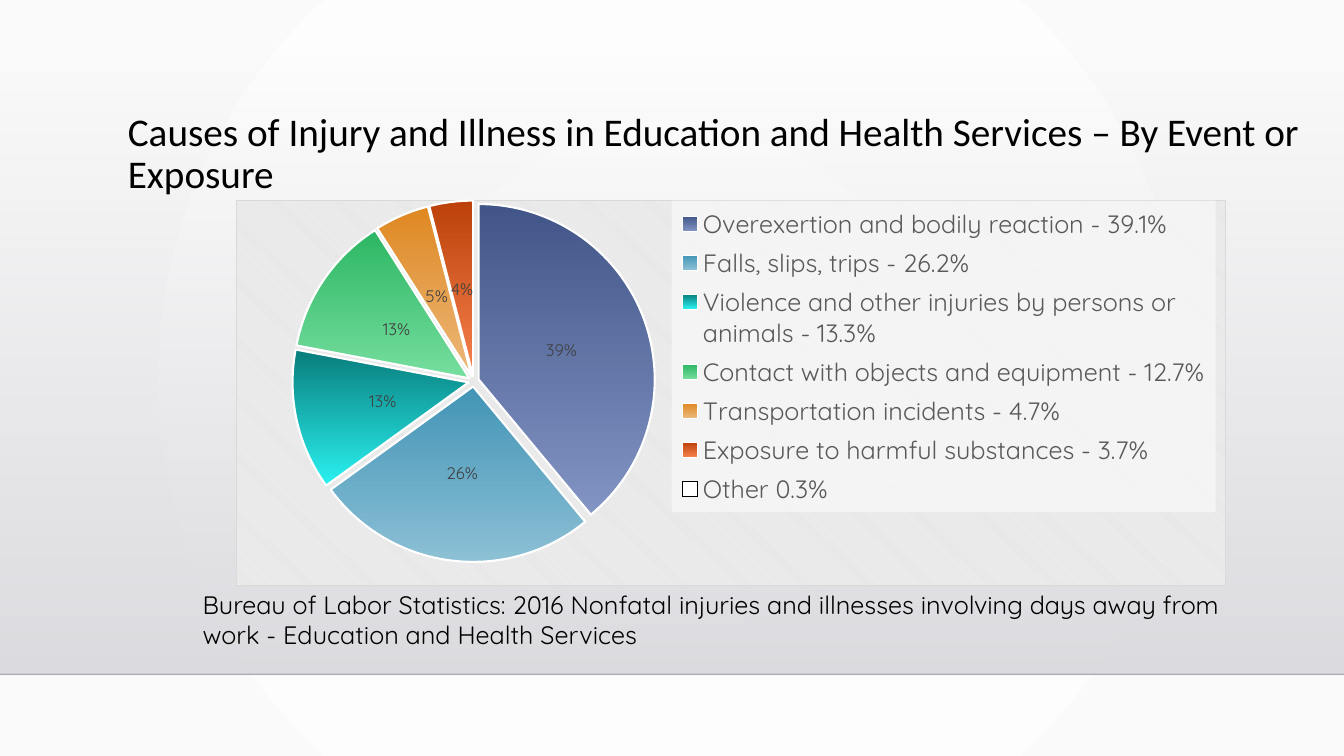
from dataclasses import dataclass

from pptx import Presentation
from pptx.chart.data import CategoryChartData
from pptx.dml.color import RGBColor
from pptx.enum.chart import XL_CHART_TYPE, XL_LABEL_POSITION, XL_LEGEND_POSITION
from pptx.enum.shapes import MSO_CONNECTOR, MSO_SHAPE
from pptx.enum.text import MSO_ANCHOR
from pptx.oxml import parse_xml
from pptx.oxml.ns import nsdecls, qn
from pptx.util import Inches, Pt


@dataclass(frozen=True)
class Theme:
    head: str = "Calibri"
    body: str = "Quicksand"
    ink: str = "000000"
    soft: str = "595959"
    label: str = "404040"
    white: str = "FFFFFF"
    page: tuple = ("FFFFFF", "FAFAFA")
    band: tuple = ("DCDCE0", "DEDEE2")
    rule: str = "000001"
    weave: str = "E6E6E6"
    edge: str = "D9D9D9"
    key: str = "F2F2F2"
    big: int = 28
    mid: int = 18
    small: int = 12
    tiny: int = 10


CAUSES = [
    ("Overexertion and bodily reaction - 39.1%", 39, ("415588", "8294C3")),
    ("Falls, slips, trips - 26.2%", 26, ("4294B6", "8CC0D5")),
    ("Violence and other injuries by persons or animals - 13.3%", 13, ("087D7C", "2AF1F0")),
    ("Contact with objects and equipment - 12.7%", 13, ("2CB663", "76DE9F")),
    ("Transportation incidents - 4.7%", 5, ("DF8822", "ECB87A")),
    ("Exposure to harmful substances - 3.7%", 4, ("BC410A", "F6814D")),
    ("Other 0.3%", None, None),
]


def node(text):
    """Parse XML whose first tag still lacks its namespaces."""
    tag, rest = text.split(">", 1)
    mark = "/" if tag.endswith("/") else ""
    return parse_xml(f"{tag.rstrip('/')} {nsdecls('a', 'c')}{mark}>{rest}")


def fade(root, share):
    """Set the opacity, in percent, of the first colour below root."""
    tint = next(root.iter(qn("a:srgbClr")))
    tint.append(node(f'<a:alpha val="{share * 1000}"/>'))


def blend(fill, pair):
    """Fill from top to bottom with a pair of colours."""
    fill.gradient()
    fill.gradient_angle = 270
    for stop, tint in zip(fill.gradient_stops, pair):
        stop.color.rgb = RGBColor.from_string(tint)


def style(font, face, size, tint):
    font.name, font.size = face, Pt(size)
    font.color.rgb = RGBColor.from_string(tint)


def place(part, index, box):
    """Give a chart part a fixed box, in shares of the chart."""
    for old in part.findall(qn("c:layout")):
        part.remove(old)
    inner = '<c:layoutTarget val="inner"/>' if part.tag == qn("c:plotArea") else ""
    modes = '<c:xMode val="edge"/><c:yMode val="edge"/>'
    sizes = "".join(f'<c:{key} val="{val}"/>' for key, val in zip("xywh", box))
    part.insert(index, node(
        f"<c:layout><c:manualLayout>{inner}{modes}{sizes}</c:manualLayout></c:layout>"))


def skin(part, look):
    """Put fill and line ahead of the text style of a chart part."""
    part.find(qn("c:txPr")).addprevious(node(f"<c:spPr>{look}</c:spPr>"))


class Page:
    """One slide; every box is left, top, width, height in percent of it."""

    def __init__(self, theme):
        self.theme = theme
        self.deck = Presentation()
        self.deck.slide_width, self.deck.slide_height = Inches(13.33), Inches(7.5)
        self.slide = self.deck.slides.add_slide(self.deck.slide_layouts[6])

    def scale(self, *box):
        sides = (self.deck.slide_width, self.deck.slide_height) * 2
        return [round(side * share / 100) for side, share in zip(sides, box)]

    def ground(self):
        blend(self.slide.background.fill, self.theme.page)
        line = next(self.slide._element.iter(qn("a:lin")))
        line.addprevious(node(
            '<a:path path="circle"><a:fillToRect l="50000" t="50000" r="50000" b="50000"/></a:path>'))
        line.getparent().remove(line)

    def band(self, *box):
        shape = self.slide.shapes.add_shape(MSO_SHAPE.RECTANGLE, *self.scale(*box))
        shape.shadow.inherit = False
        shape.line.fill.background()
        blend(shape.fill, self.theme.band)
        fade(shape._element, 0)

    def rule(self, *ends):
        line = self.slide.shapes.add_connector(MSO_CONNECTOR.STRAIGHT, *self.scale(*ends))
        line.line.width = Pt(1)
        line.line.color.rgb = RGBColor.from_string(self.theme.rule)
        fade(line._element, 20)
        line._element.spPr.append(node("<a:effectLst/>"))

    def text(self, words, box, face, size, space=1.0, anchor=MSO_ANCHOR.TOP):
        frame = self.slide.shapes.add_textbox(*self.scale(*box)).text_frame
        frame.word_wrap = True
        frame.vertical_anchor = anchor
        frame.text = words
        para = frame.paragraphs[0]
        para.line_spacing = space
        style(para.runs[0].font, face, size, self.theme.ink)

    def pie(self, rows, box):
        theme = self.theme
        data = CategoryChartData()
        data.categories = [name for name, _, _ in rows]
        data.add_series("Series 1", [share for _, share, _ in rows])
        chart = self.slide.shapes.add_chart(
            XL_CHART_TYPE.PIE, *self.scale(*box), data).chart
        chart.has_title = False
        style(chart.font, theme.body, theme.tiny, theme.ink)
        skin(chart._chartSpace, f"""<a:pattFill prst="dkDnDiag">
            <a:fgClr><a:srgbClr val="{theme.white}"/></a:fgClr>
            <a:bgClr><a:srgbClr val="{theme.weave}"/></a:bgClr></a:pattFill>
            <a:ln w="9525"><a:solidFill><a:srgbClr val="{theme.edge}"/></a:solidFill></a:ln>""")
        place(next(chart._chartSpace.iter(qn("c:plotArea"))), 0, (0.03, 0, 0.42, 0.94))
        self.slices(chart.plots[0], rows)
        self.key(chart)

    def slices(self, plot, rows):
        theme = self.theme
        plot.vary_by_categories = True
        series = plot.series[0]
        for index, (_, _, pair) in enumerate(rows):
            form = series.points[index].format
            if pair:
                blend(form.fill, pair)
            else:
                form.fill.solid()
                form.fill.fore_color.rgb = RGBColor.from_string(theme.white)
            form.line.width = Pt(1.5 if pair else 0.75)
            form.line.color.rgb = RGBColor.from_string(theme.white if pair else theme.ink)
        series._element.find(qn("c:dPt")).addprevious(node('<c:explosion val="3"/>'))
        plot.has_data_labels = True
        labels = plot.data_labels
        style(labels.font, theme.body, theme.small, theme.label)
        labels.number_format, labels.number_format_is_linked = "0%", False
        labels.show_percentage, labels.show_value = True, False
        labels.position = XL_LABEL_POSITION.CENTER

    def key(self, chart):
        theme = self.theme
        chart.has_legend = True
        legend = chart.legend
        legend.position = XL_LEGEND_POSITION.RIGHT
        legend.include_in_layout = False
        style(legend.font, theme.body, theme.mid, theme.soft)
        place(legend._element, 1, (0.44, 0, 0.55, 0.81))
        skin(legend._element, f"""<a:solidFill><a:srgbClr val="{theme.white}">
            <a:alpha val="50000"/></a:srgbClr></a:solidFill><a:ln><a:noFill/></a:ln>""")


def main():
    theme = Theme()
    page = Page(theme)
    page.ground()
    page.band(0, 6.8, 100, 82.4)
    page.rule(0, 89.2, 100, 89.2)
    page.text("Causes of Injury and Illness in Education and Health Services – By Event or Exposure",
              (8.78, 14.53, 89.42, 11.87), theme.head, theme.big, 0.9, MSO_ANCHOR.MIDDLE)
    page.pie(CAUSES, (17.55, 26.4, 73.67, 51.07))
    page.text("Bureau of Labor Statistics: 2016 Nonfatal injuries and illnesses involving days away "
              "from work - Education and Health Services",
              (14.33, 77.33, 80.87, 13.47), theme.body, theme.mid)
    page.deck.save("out.pptx")


if __name__ == "__main__":
    main()
